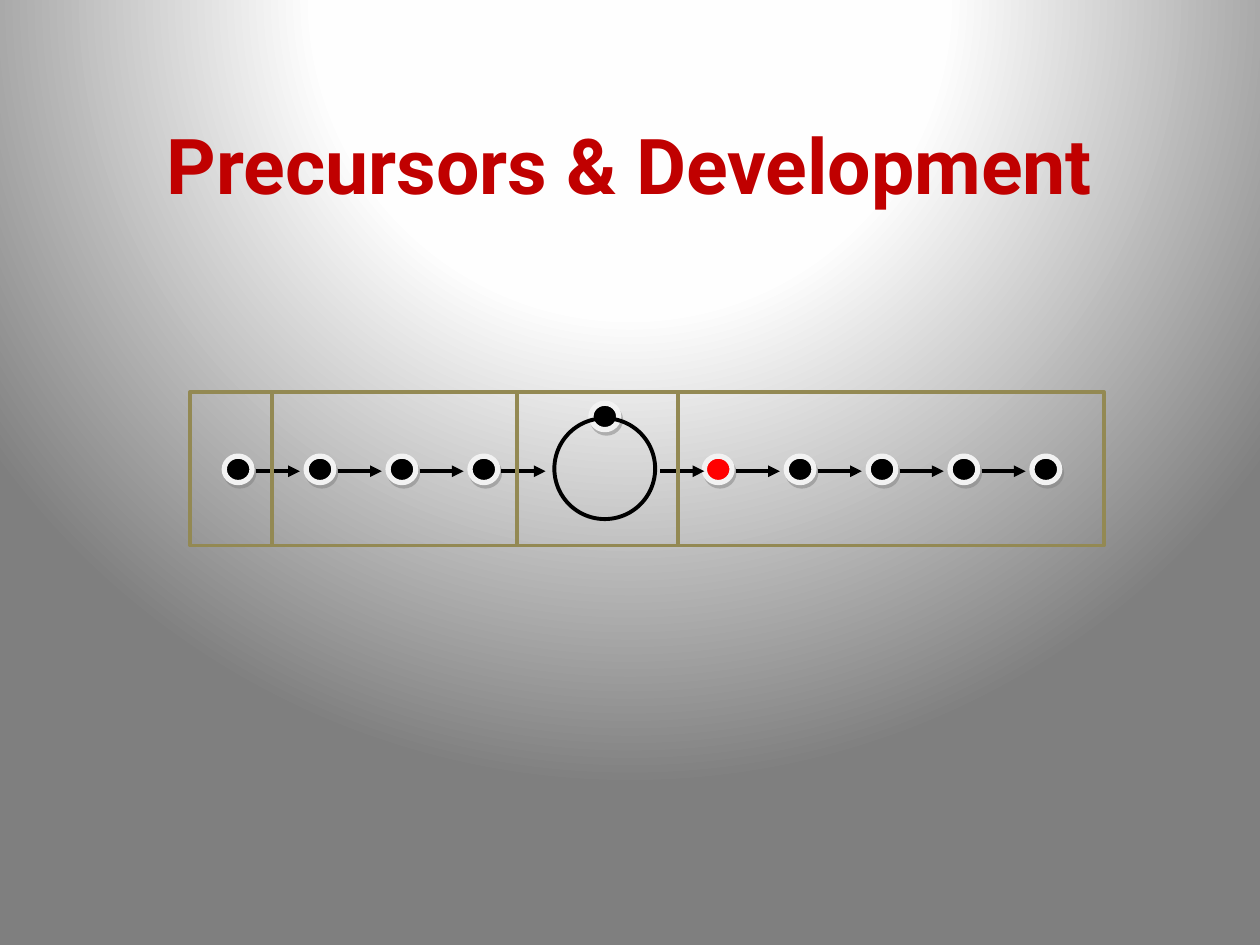
from dataclasses import dataclass

from pptx import Presentation
from pptx.dml.color import RGBColor
from pptx.enum.shapes import MSO_CONNECTOR, MSO_SHAPE
from pptx.enum.text import MSO_ANCHOR, PP_ALIGN
from pptx.oxml import parse_xml
from pptx.oxml.ns import nsdecls, qn
from pptx.util import Inches, Pt

OVAL, RECTANGLE = MSO_SHAPE.OVAL, MSO_SHAPE.RECTANGLE
STRAIGHT = MSO_CONNECTOR.STRAIGHT
MIDDLE, CENTER = MSO_ANCHOR.MIDDLE, PP_ALIGN.CENTER


@dataclass(frozen=True)
class Theme:
    font: str = "Roboto"
    title_size: float = 44
    title: str = "C00000"
    dot: str = "000000"
    marked_dot: str = "FF0000"
    dot_rim: str = "F2F2F2"
    dot_shadow: str = "7F7F7F"
    stroke: str = "000000"
    stage: str = "938953"
    rim_width: float = 3
    stroke_width: float = 2.25
    background: tuple = ((0, "FFFFFF"), (40, "FEFEFE"), (100, "7F7F7F"))


THEME = Theme()

DOT_WIDTH, DOT_HEIGHT, DOT_TOP = 0.22, 0.21, 3.62
DOT_PITCH = 0.65
ARROW_LENGTH, ARROW_Y = 0.35, 3.74
STAGE_TOP, STAGE_HEIGHT = 3.11, 1.22
STAGE_EDGES = (1.51, 2.16, 4.1, 5.38, 8.76)
DOTS_BEFORE = [1.78 + i * DOT_PITCH for i in range(4)]
DOTS_AFTER = [5.59 + i * DOT_PITCH for i in range(5)]
ARROW_GAP = 0.25  # from a dot's left edge to the start of its arrow


def set_background(slide):
    """Fill the slide with a circular gradient centred above its top edge."""
    stops = "".join(
        f'<a:gs pos="{position * 1000}"><a:srgbClr val="{color}"/></a:gs>'
        for position, color in THEME.background
    )
    background = parse_xml(
        f'<p:bg {nsdecls("p", "a")}><p:bgPr><a:gradFill rotWithShape="1">'
        f'<a:gsLst>{stops}</a:gsLst><a:path path="circle">'
        '<a:fillToRect l="50000" t="-80000" r="50000" b="180000"/></a:path>'
        "</a:gradFill><a:effectLst/></p:bgPr></p:bg>"
    )
    slide.element.find(qn("p:cSld")).insert(0, background)


def add_title(slide, text):
    box = slide.shapes.add_textbox(
        Inches(0.75), Inches(0.67), Inches(8.5), Inches(1.25)
    )
    frame = box.text_frame
    frame.word_wrap = True
    frame.vertical_anchor = MIDDLE
    paragraph = frame.paragraphs[0]
    paragraph.alignment = CENTER
    run = paragraph.add_run()
    run.text = text
    run.font.name = THEME.font
    run.font.size = Pt(THEME.title_size)
    run.font.bold = True
    run.font.color.rgb = RGBColor.from_string(THEME.title)


def set_line(item, color, width):
    item.line.color.rgb = RGBColor.from_string(color)
    item.line.width = Pt(width)


def add_outline(slide, kind, left, top, width, height, color):
    """Add an unfilled shape; the caller may fill it afterwards."""
    shape = slide.shapes.add_shape(
        kind, Inches(left), Inches(top), Inches(width), Inches(height)
    )
    shape.fill.background()
    set_line(shape, color, THEME.stroke_width)
    shape.shadow.inherit = False
    return shape


def add_dot(slide, left, top=DOT_TOP, color=THEME.dot):
    dot = add_outline(slide, OVAL, left, top, DOT_WIDTH, DOT_HEIGHT, THEME.dot_rim)
    dot.line.width = Pt(THEME.rim_width)
    dot.fill.solid()
    dot.fill.fore_color.rgb = RGBColor.from_string(color)
    shadow = parse_xml(
        f'<a:outerShdw {nsdecls("a")} blurRad="0" dist="{Pt(2.2)}" dir="{63 * 60000}" '
        f'algn="ctr" rotWithShape="0"><a:srgbClr val="{THEME.dot_shadow}">'
        '<a:alpha val="50000"/></a:srgbClr></a:outerShdw>'
    )
    dot.element.spPr.find(qn("a:effectLst")).append(shadow)


def add_arrow(slide, left):
    arrow = slide.shapes.add_connector(
        STRAIGHT,
        Inches(left), Inches(ARROW_Y), Inches(left + ARROW_LENGTH), Inches(ARROW_Y),
    )
    set_line(arrow, THEME.stroke, THEME.stroke_width)
    properties = arrow.element.spPr
    properties.find(qn("a:ln")).append(
        parse_xml(f'<a:tailEnd {nsdecls("a")} type="triangle"/>')
    )
    properties.append(parse_xml(f'<a:effectLst {nsdecls("a")}/>'))


def add_timeline(slide):
    for left in DOTS_BEFORE:
        add_dot(slide, left)
    add_dot(slide, 4.69, top=3.2)
    for index, left in enumerate(DOTS_AFTER):
        add_dot(slide, left, color=THEME.dot if index else THEME.marked_dot)

    add_outline(slide, OVAL, 4.4, 3.32, 0.8, 0.8, THEME.stroke)

    ring_exit = 5.24
    dot_exits = [left + ARROW_GAP for left in DOTS_BEFORE + DOTS_AFTER[:-1]]
    for left in dot_exits + [ring_exit]:
        add_arrow(slide, left)

    for left, right in zip(STAGE_EDGES, STAGE_EDGES[1:]):
        add_outline(slide, RECTANGLE, left, STAGE_TOP, right - left, STAGE_HEIGHT,
                    THEME.stage)


def main():
    presentation = Presentation()
    presentation.slide_width = Inches(10)
    presentation.slide_height = Inches(7.5)
    slide = presentation.slides.add_slide(presentation.slide_layouts[6])
    set_background(slide)
    add_title(slide, "Precursors & Development")
    add_timeline(slide)
    presentation.save("out.pptx")


if __name__ == "__main__":
    main()
